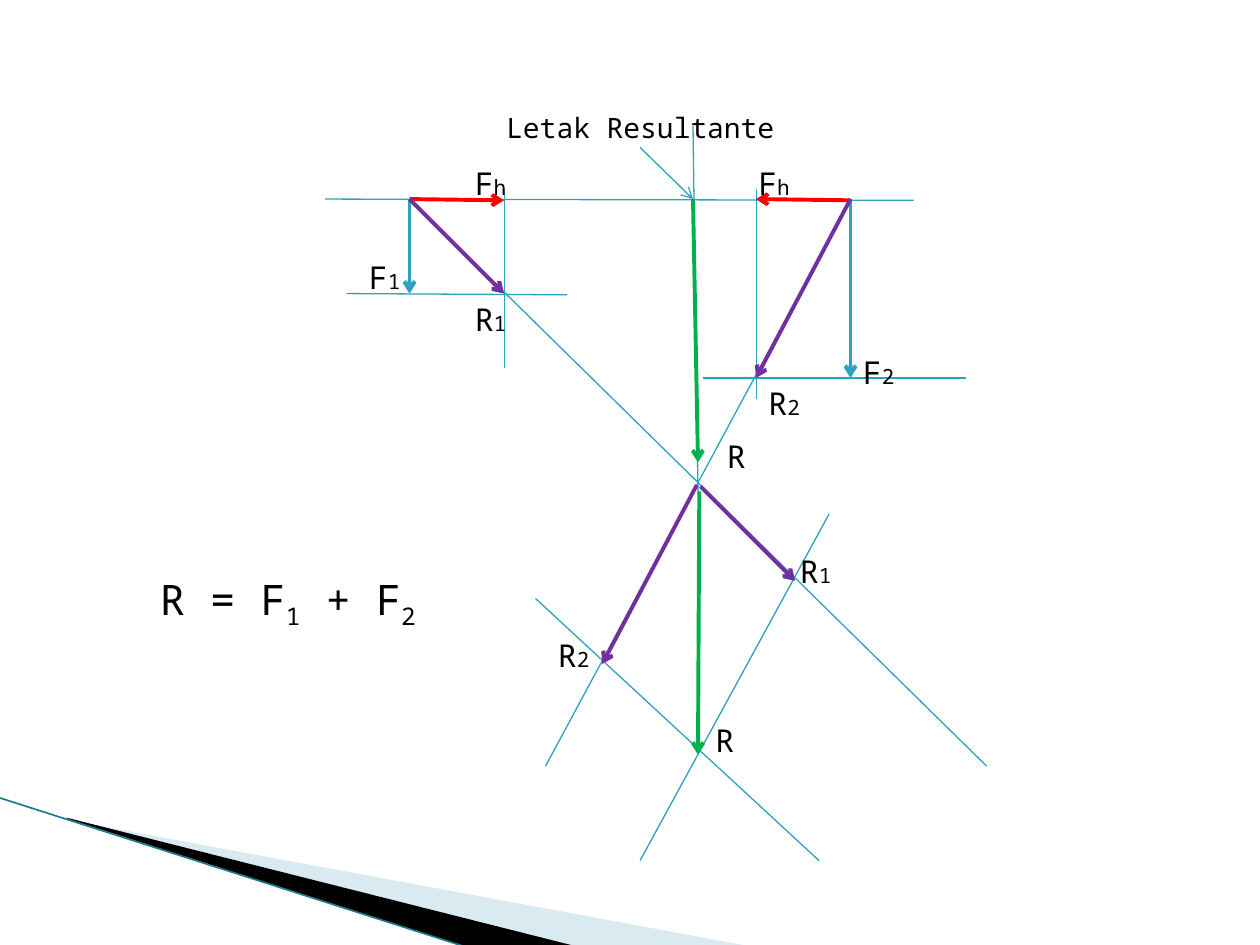
from lxml import etree
from pptx import Presentation
from pptx.dml.color import RGBColor
from pptx.enum import shapes, text
from pptx.oxml.ns import qn
from pptx.util import Inches, Pt

FONT = "Noto Sans Mono"
BLACK = RGBColor(0x00, 0x00, 0x00)
TEAL = RGBColor(0x2D, 0xA2, 0xBF)
DARK_TEAL = RGBColor(0x21, 0x79, 0x8E)
PALE_BLUE = RGBColor(0xA0, 0xCB, 0xDC)
RED = RGBColor(0xFF, 0x00, 0x00)
PURPLE = RGBColor(0x70, 0x30, 0xA0)
GREEN = RGBColor(0x00, 0xB0, 0x50)

# Corner decoration: points, colour, opacity in percent
WEDGES = [
    ([(0.55, 6.51), (5.95, 7.51), (4.56, 7.51), (0.55, 6.5)], PALE_BLUE, 40),
    ([(0.53, 6.49), (4.57, 7.51), (3.72, 7.52), (0.54, 6.5)], BLACK, 100),
]
CORNER_EDGE = ((-0.01, 6.33), (3.71, 7.52))

# Points shared by several lines
LEFT, RIGHT = (3.25, 1.58), (6.75, 1.58)
R1_TIP, R2_TIP = (4, 2.33), (6, 3)
RESULTANT = (5.5, 1.58)

GUIDES = [
    ((2.58, 1.58), (7.25, 1.59)),
    ((2.75, 2.33), (4.5, 2.34)),
    (LEFT, (7.83, 6.08)),
    ((5.58, 3), (7.67, 3)),
    (RIGHT, (4.33, 6.08)),
    ((4.25, 4.75), (6.5, 6.83)),
    ((6.58, 4.08), (5.08, 6.83)),
    ((5.54, 3.92), (5.5, 1)),
]
FAINT_GUIDES = [((4, 1.5), (4, 2.92)), ((6, 1.5), (6, 3.17))]

# Vectors run from tail to tip
VECTORS = [
    (LEFT, (3.25, 2.33), TEAL),
    (RIGHT, (6.75, 3), TEAL),
    (LEFT, (4, 1.59), RED),
    ((6.75, 1.59), (6, 1.58), RED),
    (LEFT, R1_TIP, PURPLE),
    (RIGHT, R2_TIP, PURPLE),
    ((5.56, 3.86), (6.31, 4.61), PURPLE),
    ((5.53, 3.85), (4.78, 5.27), PURPLE),
    ((5.55, 3.9), (5.54, 5.99), GREEN),
    (RESULTANT, (5.54, 3.67), GREEN),
]
POINTER = ((5.08, 1.17), RESULTANT)

# Vector labels: left, top, letter, small suffix
LABELS = [
    (2.83, 2, "F", "1"),
    (6.75, 2.75, "F", "2"),
    (3.67, 1.25, "F", "h"),
    (5.92, 1.25, "F", "h"),
    (3.67, 2.33, "R", "1"),
    (6, 3, "R", "2"),
    (6.25, 4.33, "R", "1"),
    (4.33, 5, "R", "2"),
    (5.58, 5.67, "R", ""),
    (5.67, 3.42, "R", ""),
]
FORMULA = [("R = F", 24, 0), ("1", 24, -25), (" + F", 24, 0), ("2", 24, -25)]


def add_line(slide, start, end, color=TEAL, width=0.75, arrow=False):
    points = [Inches(value) for value in (*start, *end)]
    connector = slide.shapes.add_connector(shapes.MSO_CONNECTOR.STRAIGHT, *points)
    connector.line.color.rgb = color
    connector.line.width = Pt(width)
    if arrow:
        etree.SubElement(connector.line._get_or_add_ln(), qn("a:tailEnd"), type="arrow")
    etree.SubElement(connector._element.spPr, qn("a:effectLst"))


def add_wedge(slide, points, color, opacity):
    corners = [(Inches(x), Inches(y)) for x, y in points]
    builder = slide.shapes.build_freeform(*corners[0], scale=1.0)
    builder.add_line_segments(corners[1:], close=True)
    wedge = builder.convert_to_shape()
    wedge.shadow.inherit = False
    wedge.line.fill.background()
    wedge.fill.solid()
    wedge.fill.fore_color.rgb = color
    if opacity < 100:
        color_element = wedge._element.spPr.find(".//" + qn("a:srgbClr"))
        etree.SubElement(color_element, qn("a:alpha"), val=str(opacity * 1000))


def add_text(slide, runs, left, top, width, height, color=BLACK):
    """Add one line made of (text, size, baseline percent) runs."""
    box = slide.shapes.add_textbox(*map(Inches, (left, top, width, height)))
    frame = box.text_frame
    frame.word_wrap = True
    frame.auto_size = text.MSO_AUTO_SIZE.SHAPE_TO_FIT_TEXT
    paragraph = frame.paragraphs[0]
    for content, size, baseline in runs:
        run = paragraph.add_run()
        run.text = content
        run.font.name = FONT
        run.font.size = Pt(size)
        run.font.color.rgb = color
        if baseline:
            run._r.get_or_add_rPr().set("baseline", str(baseline * 1000))


def main():
    presentation = Presentation()
    presentation.slide_width = Inches(10)
    presentation.slide_height = Inches(7.5)
    slide = presentation.slides.add_slide(presentation.slide_layouts[6])

    for wedge in WEDGES:
        add_wedge(slide, *wedge)
    add_line(slide, *CORNER_EDGE, color=DARK_TEAL, width=0.95)

    for guide in GUIDES:
        add_line(slide, *guide)
    for guide in FAINT_GUIDES:
        add_line(slide, *guide, width=0.25)
    for start, end, color in VECTORS:
        add_line(slide, start, end, color=color, width=2.25, arrow=True)
    add_line(slide, *POINTER, arrow=True)

    for left, top, letter, suffix in LABELS:
        runs = [(letter, 18, 0)] + ([(suffix, 12, 0)] if suffix else [])
        add_text(slide, runs, left, top, 0.5, 0.4)
    add_text(slide, FORMULA, 1.17, 4.5, 2.5, 0.5)
    add_text(slide, [("Letak Resultante", 16, 0)], 3.92, 0.83, 2.83, 0.37)

    presentation.save("out.pptx")


if __name__ == "__main__":
    main()
